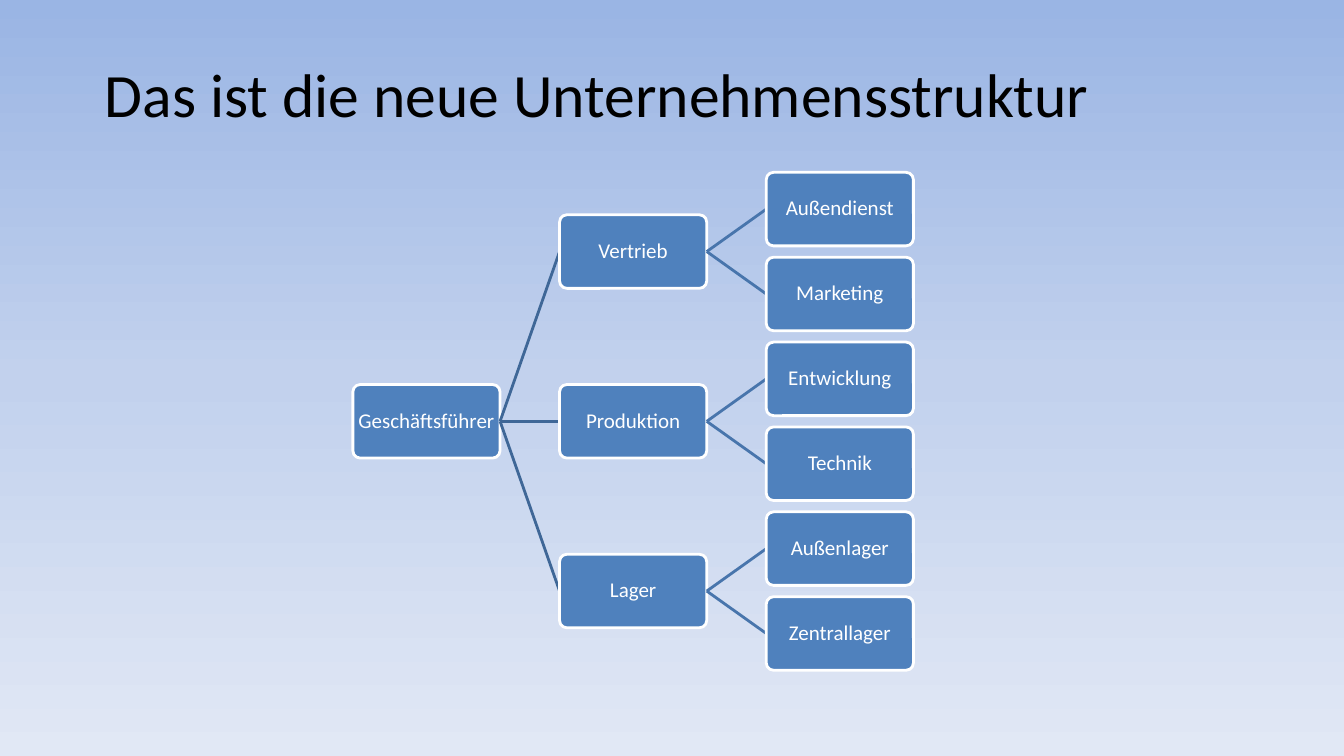
"""Build the slide that shows the new company structure as a tree."""
from copy import deepcopy
from dataclasses import dataclass

from pptx import Presentation
from pptx.dml.color import RGBColor
from pptx.enum.shapes import MSO_CONNECTOR as Link, MSO_SHAPE as Form
from pptx.enum.text import MSO_ANCHOR as Anchor, PP_ALIGN as Align
from pptx.oxml.ns import qn
from pptx.shapes.autoshape import Shape
from pptx.slide import Slide
from pptx.text.text import TextFrame
from pptx.util import Inches, Pt
from lxml.etree import SubElement

LEFT, TOP = 3.5, 1.71
WIDTH, HEIGHT = 1.46, 0.73
COL_STEP, ROW_STEP = 2.05, 4.21 / 5
EDGES = ("3F6797", "4875AC")


@dataclass(frozen=True)
class Unit:
    name: str
    teams: tuple["Unit", ...] = ()

    def size(self) -> int:
        return sum(team.size() for team in self.teams) or 1


CHART = Unit("Geschäftsführer", (
    Unit("Vertrieb", (Unit("Außendienst"), Unit("Marketing"))),
    Unit("Produktion", (Unit("Entwicklung"), Unit("Technik"))),
    Unit("Lager", (Unit("Außenlager"), Unit("Zentrallager"))),
))


def color(code: str) -> RGBColor:
    return RGBColor.from_string(code)


def write(frame: TextFrame, text: str, size: float, code: str) -> None:
    frame.word_wrap = True
    frame.vertical_anchor = Anchor.MIDDLE
    para = frame.paragraphs[0]
    para.text = text
    para.alignment = Align.CENTER
    para.font.name = "Calibri"
    para.font.size = Pt(size)
    para.font.color.rgb = color(code)


def paint(slide: Slide, codes: tuple[str, str, str]) -> None:
    fill = slide.background.fill
    fill.gradient()
    fill.gradient_angle = 270
    stops = next(slide.element.iter(qn("a:gsLst")))
    stops.insert(1, deepcopy(stops[0]))
    for index, (stop, code) in enumerate(zip(fill.gradient_stops, codes)):
        stop.position = index / 2
        stop.color.rgb = color(code)


def add_box(slide: Slide, name: str, left: float, top: float) -> Shape:
    box = slide.shapes.add_shape(Form.ROUNDED_RECTANGLE, Inches(left), Inches(top),
                                 Inches(WIDTH), Inches(HEIGHT))
    box.adjustments[0] = 0.1
    box.shadow.inherit = False
    box.fill.solid()
    box.fill.fore_color.rgb = color("4F81BD")
    box.line.color.rgb = color("FFFFFF")
    box.line.width = Pt(2)
    frame = box.text_frame
    frame.margin_left = frame.margin_right = Inches(0.03)
    frame.margin_top = frame.margin_bottom = Inches(0.03)
    write(frame, name, 15, "FFFFFF")
    frame.paragraphs[0].line_spacing = 0.9
    return box


def join(slide: Slide, boss: Shape, box: Shape, code: str) -> None:
    line = slide.shapes.add_connector(Link.STRAIGHT, 0, 0, 0, 0)
    line.begin_connect(boss, 3)
    line.end_connect(box, 1)
    line.line.color.rgb = color(code)
    line.line.width = Pt(2)
    SubElement(line.element.spPr, qn("a:effectLst"))
    box.element.addprevious(line.element)


def draw(slide: Slide, unit: Unit, level: int = 0, row: int = 0) -> Shape:
    middle = row + (unit.size() - 1) / 2
    box = add_box(slide, unit.name, LEFT + level * COL_STEP, TOP + middle * ROW_STEP)
    for team in unit.teams:
        join(slide, box, draw(slide, team, level + 1, row), EDGES[level])
        row += team.size()
    return box


def main() -> None:
    deck = Presentation()
    deck.slide_width, deck.slide_height = Inches(13.33), Inches(7.5)
    slide = deck.slides.add_slide(deck.slide_layouts[6])
    paint(slide, ("9AB5E4", "C2D1ED", "E1E8F5"))
    title = slide.shapes.add_textbox(Inches(0.67), Inches(0.3), Inches(10.51), Inches(1.25))
    write(title.text_frame, "Das ist die neue Unternehmensstruktur", 44, "000000")
    draw(slide, CHART)
    deck.save("out.pptx")


if __name__ == "__main__":
    main()
